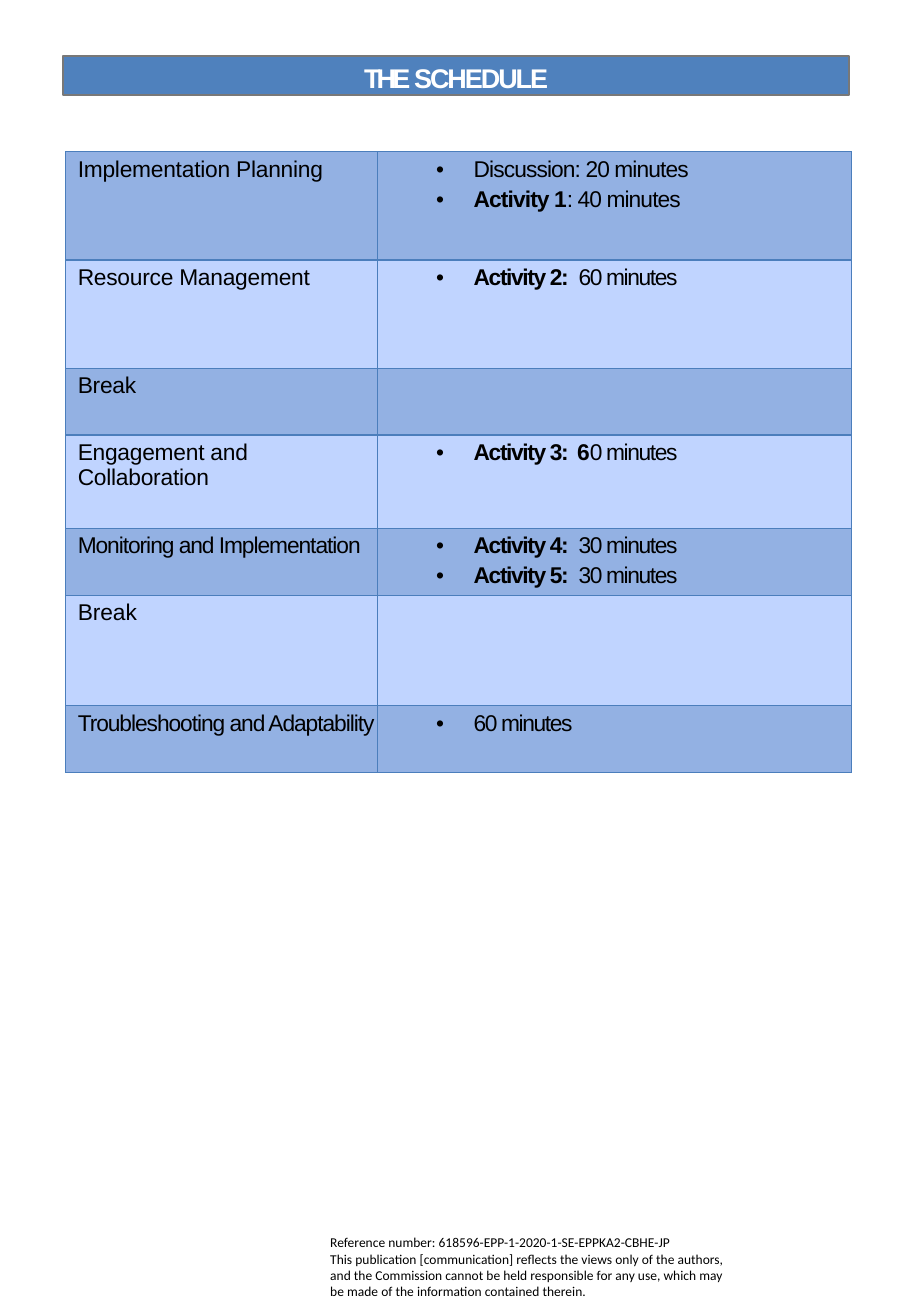
from lxml import etree
from pptx import Presentation
from pptx.dml.color import RGBColor
from pptx.enum.shapes import MSO_SHAPE
from pptx.enum.text import MSO_ANCHOR, PP_ALIGN
from pptx.oxml.ns import qn
from pptx.util import Inches, Pt

RECT = MSO_SHAPE.RECTANGLE
TOP = MSO_ANCHOR.TOP
LEFT, CENTER = PP_ALIGN.LEFT, PP_ALIGN.CENTER

COLORS = {"bar": "4F81BD", "bar_line": "787878", "border": "4B7EBC",
          "dark_row": "93B1E3", "light_row": "C0D4FF",
          "black": "000000", "white": "FFFFFF"}
TITLE = {"name": "Arial", "size": Pt(16), "bold": True}
BODY = {"name": "Arial", "size": Pt(13.5), "bold": False}
BOLD = {**BODY, "bold": True}
NOTE = {"name": "Calibri", "size": Pt(8)}

COLUMNS = [2.57, 3.9]
# Row height, topic, topic letter spacing, activities as (bold, plain, spacing)
SCHEDULE = [
    (0.89, "Implementation Planning", -0.1,
     [("", "Discussion: 20 minutes", -0.5), ("Activity 1", ": 40 minutes", -0.5)]),
    (0.89, "Resource Management", -0.1, [("Activity 2:  ", "60 minutes", -0.8)]),
    (0.55, "Break", -0.1, []),
    (0.77, "Engagement and Collaboration", -0.1, [("Activity 3:  6", "0 minutes", -0.8)]),
    (0.55, "Monitoring and Implementation", -0.6,
     [("Activity 4:  ", "30 minutes", -0.8), ("Activity 5:  ", "30 minutes", -0.8)]),
    (0.91, "Break", 0, []),
    (0.55, "Troubleshooting and Adaptability", -0.6, [("", "60 minutes", -0.8)]),
]
REFERENCE = ("Reference number: 618596-EPP-1-2020-1-SE-EPPKA2-CBHE-JP\v"
             "This publication [communication] reflects the views only of the authors, "
             "and the Commission cannot be held responsible for any use, which may be "
             "made of the information contained therein.")


def rgb(name):
    return RGBColor.from_string(COLORS[name])


class Page:
    def __init__(self, prs):
        self.slide = prs.slides.add_slide(prs.slide_layouts[6])

    def set_font(self, r, style, color):
        for key, value in style.items():
            setattr(r.font, key, value)
        r.font.color.rgb = rgb(color)

    def add_runs(self, p, runs, color="black", align=LEFT):
        """Each run is (text, format, letter spacing in points)."""
        p.alignment = align
        for text, style, spacing in runs:
            if text:
                r = p.add_run()
                r.text = text
                self.set_font(r, style, color)
                r.font._element.set("spc", str(round(spacing * 100)))

    def indent(self, p, left, hanging=0):
        pPr = p._p.get_or_add_pPr()
        pPr.set("marL", str(Inches(left)))
        pPr.set("indent", str(-Inches(hanging)))
        if hanging:
            etree.SubElement(pPr, qn("a:buFont")).set("typeface", "Arial")
            etree.SubElement(pPr, qn("a:buChar")).set("char", "•")

    def bar(self, box, runs):
        sp = self.slide.shapes.add_shape(RECT, *map(Inches, box))
        sp.shadow.inherit = False
        sp.fill.solid()
        sp.fill.fore_color.rgb = rgb("bar")
        sp.line.color.rgb = rgb("bar_line")
        sp.line.width = Pt(0.96)
        tf = sp.text_frame
        tf.vertical_anchor = TOP
        tf.margin_left = tf.margin_right = tf.margin_bottom = 0
        tf.margin_top = Inches(0.05)
        self.add_runs(tf.paragraphs[0], runs, "white", CENTER)

    def note(self, box, text):
        tf = self.slide.shapes.add_textbox(*map(Inches, box)).text_frame
        tf.word_wrap = True
        p = tf.paragraphs[0]
        p.text = text
        for r in p.runs:
            self.set_font(r, NOTE, "black")

    def style_cell(self, cell, fill):
        cell.margin_left = cell.margin_right = cell.margin_bottom = 0
        cell.margin_top = Inches(0.04)
        tcPr = cell._tc.get_or_add_tcPr()
        for side in ("lnL", "lnR", "lnT", "lnB"):
            ln = etree.SubElement(tcPr, qn(f"a:{side}"), w=str(Pt(0.75)))
            solid = etree.SubElement(ln, qn("a:solidFill"))
            etree.SubElement(solid, qn("a:srgbClr"), val=COLORS["border"])
        cell.fill.solid()
        cell.fill.fore_color.rgb = rgb(fill)

    def schedule(self, left, top, rows):
        size = (sum(COLUMNS), sum(row[0] for row in rows))
        table = self.slide.shapes.add_table(
            len(rows), len(COLUMNS), *map(Inches, (left, top, *size))).table
        table.first_row = table.horz_banding = False
        for column, width in zip(table.columns, COLUMNS):
            column.width = Inches(width)
        for i, (height, topic, spacing, activities) in enumerate(rows):
            table.rows[i].height = Inches(height)
            topic_cell, activity_cell = table.cell(i, 0), table.cell(i, 1)
            for cell in (topic_cell, activity_cell):
                self.style_cell(cell, "light_row" if i % 2 else "dark_row")
            p = topic_cell.text_frame.paragraphs[0]
            self.indent(p, 0.1)
            self.add_runs(p, [(topic, BODY, spacing)])
            tf = activity_cell.text_frame
            for j, (bold, plain, tight) in enumerate(activities):
                p = tf.add_paragraph() if j else tf.paragraphs[0]
                if j:
                    p.space_before = Pt(2.7)
                self.indent(p, 0.79, 0.31)
                self.add_runs(p, [(bold, BOLD, tight), (plain, BODY, tight)])


def main():
    prs = Presentation()
    prs.slide_width, prs.slide_height = Inches(7.5), Inches(10.83)
    page = Page(prs)

    # Reference note
    page.note((2.62, 10.11, 3.52, 0.64), REFERENCE)

    # Schedule table
    page.schedule(0.54, 1.25, SCHEDULE)

    # Title bar
    page.bar((0.52, 0.46, 6.47, 0.32),
             [("THE ", TITLE, -2.2), ("SCHEDULE", TITLE, -1.2)])

    prs.save("out.pptx")


if __name__ == "__main__":
    main()
